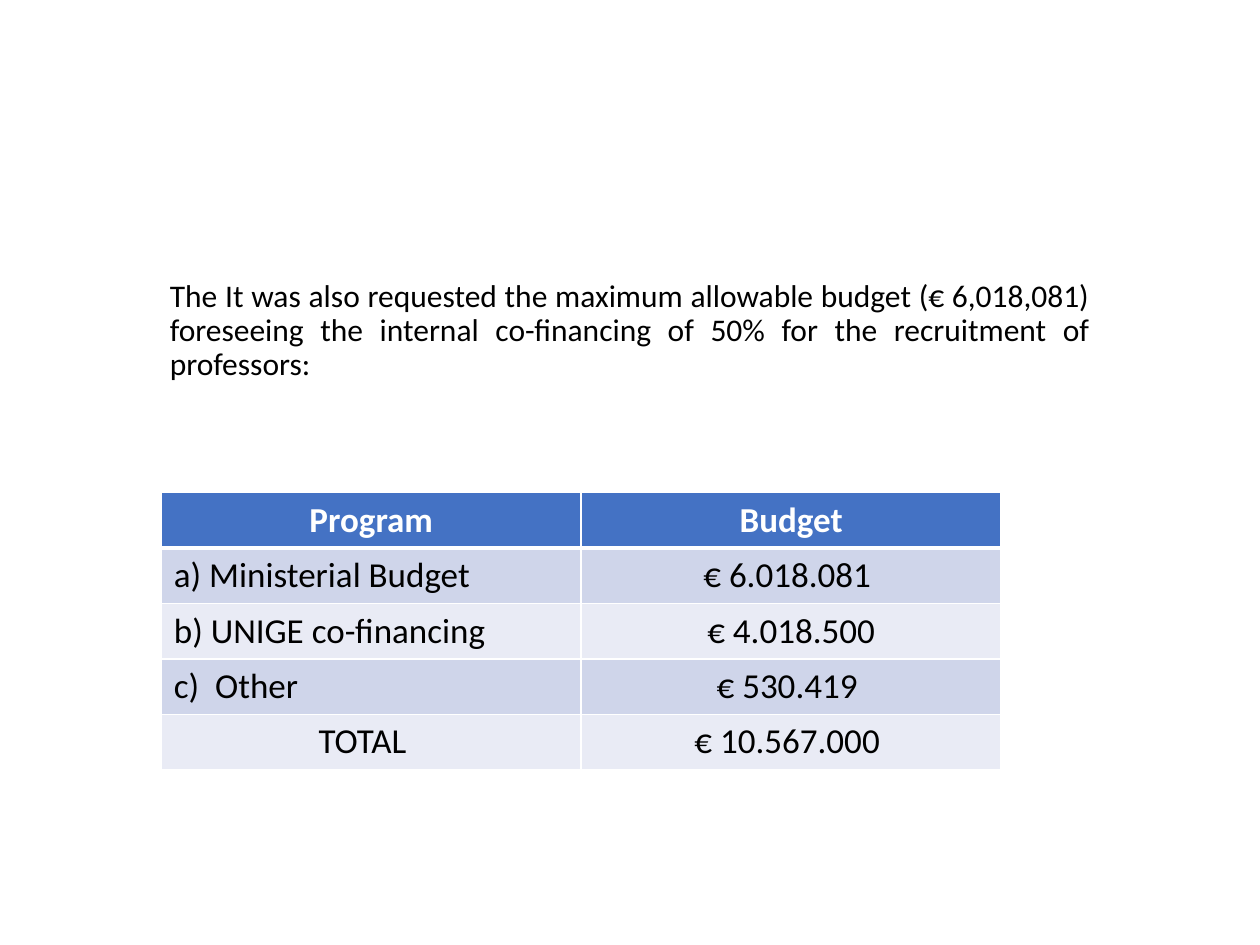
from dataclasses import dataclass

from lxml import etree
from pptx import Presentation
from pptx import util as u
from pptx.dml.color import RGBColor
from pptx.enum import text
from pptx.oxml.ns import qn

WIDE, HIGH = u.Inches(10), u.Inches(7.5)
FONT = "Calibri"
BLACK, WHITE, BLUE = "000000", "FFFFFF", "4472C4"
BANDS = ("CFD5EA", "E9EBF5")
LEFT, MID, JUST = text.PP_ALIGN.LEFT, text.PP_ALIGN.CENTER, text.PP_ALIGN.JUSTIFY
INTRO = (
    "The It was also requested the maximum allowable budget (€ 6,018,081) "
    "foreseeing the internal co-financing of 50% for the recruitment of professors:"
)


@dataclass
class Row:
    """One budget line of the table."""
    name: str
    sum: str
    align: text.PP_ALIGN = LEFT
    inset: float = 0.1


ROWS = (
    Row("Program", "Budget", MID),
    Row("a) Ministerial Budget", "€ 6.018.081 "),
    Row("b) UNIGE co-financing", "€ 4.018.500"),
    Row("c)  Other", "€ 530.419 "),
    Row("TOTAL", "€ 10.567.000 ", MID, 0.24),
)


def tint(code: str) -> RGBColor:
    """Turn a hex string into a colour."""
    return RGBColor.from_string(code)


def write(para, words: str, size: float, code: str, align, bold: bool = False) -> None:
    """Add one styled run to a paragraph."""
    para.alignment = align
    run = para.add_run()
    run.text = words
    font = run.font
    font.name, font.size, font.bold = FONT, u.Pt(size), bold
    font.color.rgb = tint(code)


def edge(cell, side: str, width: float) -> None:
    """Draw one white border of a cell."""
    props = cell._tc.get_or_add_tcPr()
    line = etree.SubElement(props, qn(f"a:ln{side}"), w=str(u.Pt(width)))
    fill = etree.SubElement(line, qn("a:solidFill"))
    etree.SubElement(fill, qn("a:srgbClr"), val=WHITE)


def paint(cell, words: str, align, row: int) -> None:
    """Fill, border and label a cell according to its row."""
    head = row == 0
    for side in "LRTB":
        thick = (head and side == "B") or (row == 1 and side == "T")
        edge(cell, side, 3 if thick else 1)
    cell.fill.solid()
    cell.fill.fore_color.rgb = tint(BLUE if head else BANDS[(row - 1) % 2])
    write(cell.text_frame.paragraphs[0], words, 20, WHITE if head else BLACK, align, head)


def intro(slide) -> None:
    """Place the justified opening paragraph."""
    box = slide.shapes.add_textbox(
        int(WIDE * 0.125), int(HIGH * 0.29), int(WIDE * 0.75), int(HIGH * 0.13)
    )
    box.text_frame.word_wrap = True
    para = box.text_frame.paragraphs[0]
    para.line_spacing = 0.9
    write(para, INTRO, 18, BLACK, JUST)


def budget(slide) -> None:
    """Place the budget table."""
    step = u.Inches(0.44)
    grid = slide.shapes.add_table(
        len(ROWS), 2, u.Inches(1.28), u.Inches(3.91), int(WIDE * 2 / 3), step * len(ROWS)
    ).table
    for i, row in enumerate(ROWS):
        grid.rows[i].height = step
        paint(grid.cell(i, 0), row.name, row.align, i)
        paint(grid.cell(i, 1), row.sum, MID, i)
        grid.cell(i, 0).margin_right = u.Inches(row.inset)


def main() -> None:
    """Build and save the slide."""
    deck = Presentation()
    deck.slide_width, deck.slide_height = WIDE, HIGH
    slide = deck.slides.add_slide(deck.slide_layouts[6])
    intro(slide)
    budget(slide)
    deck.save("out.pptx")


if __name__ == "__main__":
    main()
